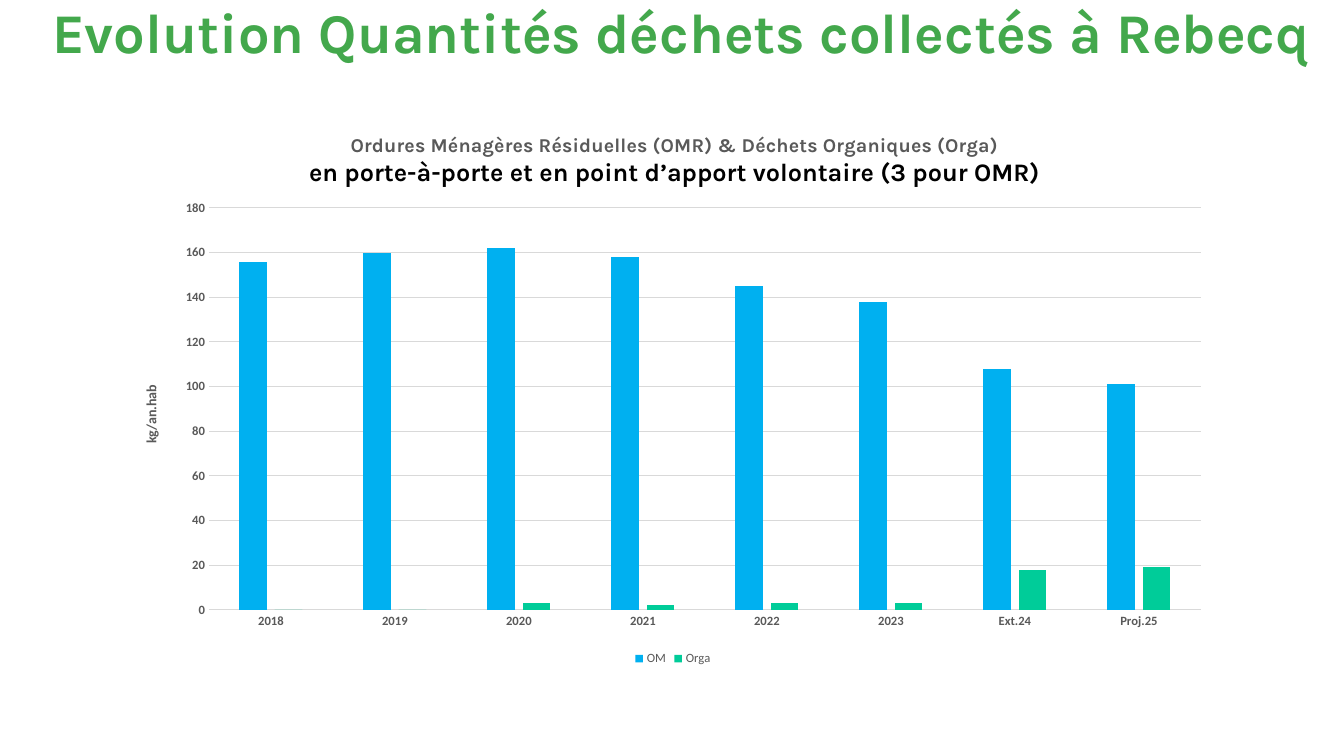
from lxml.etree import SubElement
from pptx import Presentation
from pptx.chart.data import CategoryChartData
from pptx.dml.color import RGBColor
from pptx.enum.chart import XL_CHART_TYPE, XL_LEGEND_POSITION, XL_TICK_MARK
from pptx.enum.text import MSO_ANCHOR, MSO_AUTO_SIZE, PP_ALIGN
from pptx.oxml.ns import qn
from pptx.util import Pt

COLORS = {"title": "43A84C", "OM": "00B0F0", "Orga": "00CC99",
          "grey": "595959", "grid": "D9D9D9", "black": "000000"}
TITLE = "Evolution Quantités déchets collectés à Rebecq"
CHART_TITLE = [
    ("Ordures Ménagères Résiduelles (OMR) & Déchets Organiques (Orga)", 14, "grey"),
    ("en porte-à-porte et en point d’apport volontaire (3 pour OMR)", 18, "black"),
]
UNIT = "kg/an.hab"
YEARS = ["2018", "2019", "2020", "2021", "2022", "2023", "Ext.24", "Proj.25"]
SERIES = {
    "OM": [156, 160, 162, 158, 145, 138, 108, 101],
    "Orga": [0, 0, 3, 2, 3, 3, 18, 19],
}
TITLE_BOX = (44, -48, 1274, 159)
CHART_BOX = (122, 111, 1102, 559)
PLOT_BOX = (209, 208, 992, 402)
CHART_TITLE_AT = (306, 130)


def px(n):
    return round(n * 914400 / 100.8)


def rgb(name):
    return RGBColor.from_string(COLORS[name])


def style(font, size, color, name="Calibri", bold=False):
    font.size, font.bold, font.name = Pt(size), bold, name
    font.color.rgb = rgb(color)


def set_layout(parent, before, left, top, size=()):
    for old in parent.findall(qn("c:layout")):
        parent.remove(old)
    layout = SubElement(parent, qn("c:layout"))
    parent.find(qn(before)).addprevious(layout)
    manual = SubElement(layout, qn("c:manualLayout"))
    x, y, w, h = CHART_BOX
    values = [("xMode", "edge"), ("yMode", "edge"),
              ("x", round((left - x) / w, 4)), ("y", round((top - y) / h, 4))]
    if size:
        values.insert(0, ("layoutTarget", "inner"))
        values += [("w", round(size[0] / w, 4)), ("h", round(size[1] / h, 4))]
    for tag, value in values:
        SubElement(manual, qn("c:" + tag)).set("val", str(value))


def add_title(slide):
    sp = slide.shapes.title
    sp.left, sp.top, sp.width, sp.height = map(px, TITLE_BOX)
    tf = sp.text_frame
    tf.text = TITLE
    tf.word_wrap = True
    tf.auto_size = MSO_AUTO_SIZE.NONE
    tf.vertical_anchor = MSO_ANCHOR.MIDDLE
    tf.margin_left = tf.margin_right = tf.margin_top = tf.margin_bottom = px(4)
    p = tf.paragraphs[0]
    p.alignment = PP_ALIGN.CENTER
    style(p.runs[0].font, 40, "title", "Karla", True)


def add_waste_chart(slide):
    data = CategoryChartData(number_format="#,##0")
    data.categories = YEARS
    for name, values in SERIES.items():
        data.add_series(name, values)
    chart = slide.shapes.add_chart(
        XL_CHART_TYPE.COLUMN_CLUSTERED, *map(px, CHART_BOX), data).chart
    style(chart.font, 10, "black")

    chart.has_title = True
    title = chart.chart_title
    tf = title.text_frame
    tf.text = "\n".join(text for text, size, color in CHART_TITLE)
    for p, (text, size, color) in zip(tf.paragraphs, CHART_TITLE):
        p.alignment = PP_ALIGN.CENTER
        style(p.runs[0].font, size, color, "Karla", True)
    title.include_in_layout = False
    set_layout(title._element, "c:overlay", *CHART_TITLE_AT)

    chart.has_legend = True
    chart.legend.position = XL_LEGEND_POSITION.BOTTOM
    chart.legend.include_in_layout = False
    style(chart.legend.font, 9, "grey")

    years, amounts = chart.category_axis, chart.value_axis
    for axis in (years, amounts):
        axis.major_tick_mark = axis.minor_tick_mark = XL_TICK_MARK.NONE
        style(axis.tick_labels.font, 9, "grey", bold=True)
    years.format.line.color.rgb = rgb("grid")
    years.format.line.width = Pt(0.75)
    amounts.format.line.fill.background()
    amounts.minimum_scale, amounts.maximum_scale, amounts.major_unit = 0, 180, 20
    amounts.tick_labels.number_format = "#,##0"
    amounts.tick_labels.number_format_is_linked = False
    grid = amounts.major_gridlines.format.line
    grid.color.rgb = rgb("grid")
    grid.width = Pt(0.75)
    tf = amounts.axis_title.text_frame
    tf.text = UNIT
    style(tf.paragraphs[0].runs[0].font, 10, "grey", bold=True)

    plot = chart.plots[0]
    plot.vary_by_categories = False
    plot.gap_width, plot.overlap = 219, -27
    for series in plot.series:
        series.format.fill.solid()
        series.format.fill.fore_color.rgb = rgb(series.name)
    left, top, width, height = PLOT_BOX
    set_layout(plot._element.getparent(), "c:barChart", left, top, (width, height))


def main():
    prs = Presentation()
    prs.slide_width, prs.slide_height = px(1344), px(756)
    slide = prs.slides.add_slide(prs.slide_layouts[5])
    add_title(slide)
    add_waste_chart(slide)
    prs.save("out.pptx")


if __name__ == "__main__":
    main()
